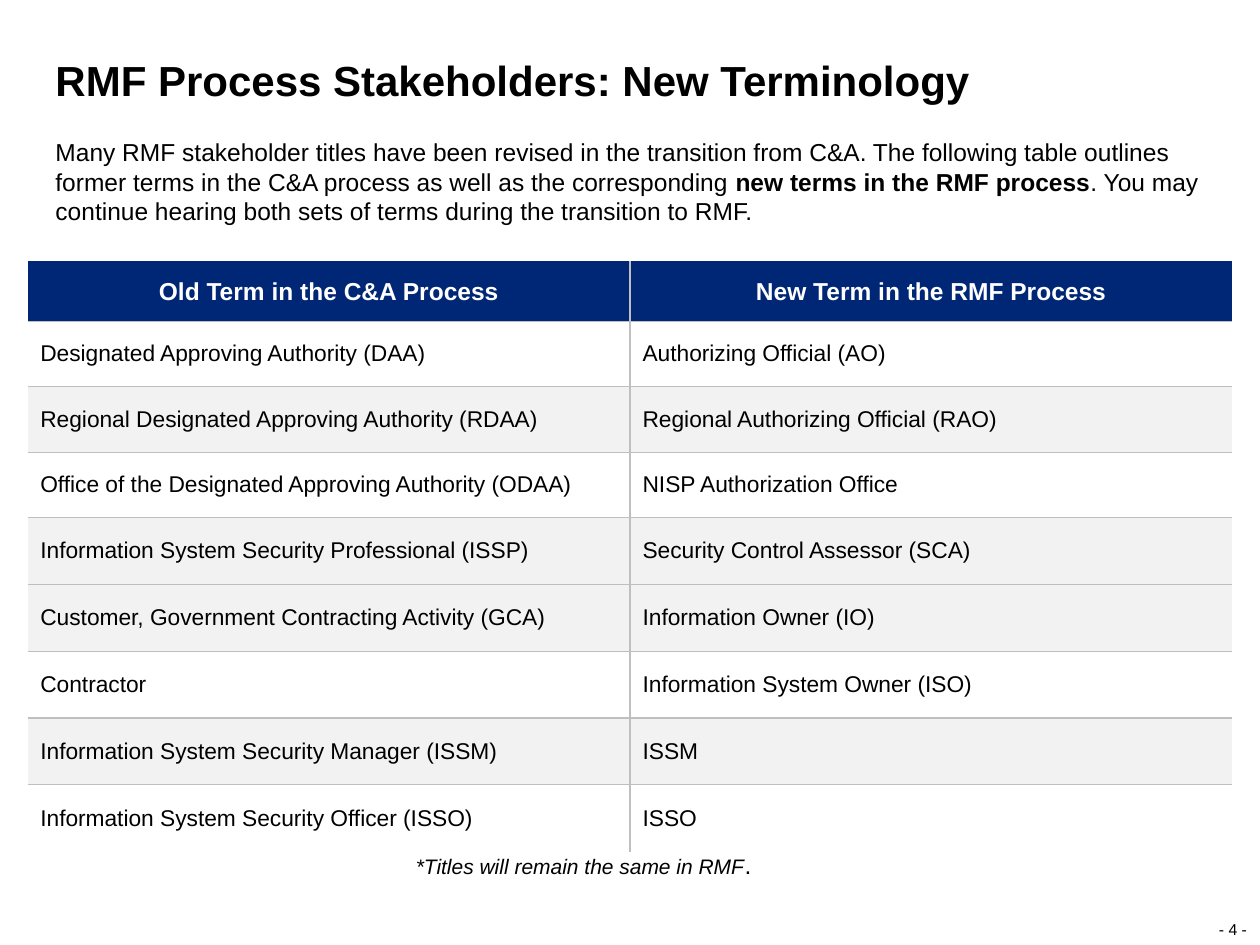
from lxml.etree import SubElement
from pptx import Presentation
from pptx.dml.color import RGBColor
from pptx.enum.text import MSO_ANCHOR, MSO_AUTO_SIZE, PP_ALIGN
from pptx.oxml.ns import qn
from pptx.util import Inches, Pt

COLORS = {"text": "000000", "white": "FFFFFF", "navy": "002776", "band": "F2F2F2", "rule": "BFBFBF"}
HEADERS = ("Old Term in the C&A Process", "New Term in the RMF Process")
TERMS = [
    ("Designated Approving Authority (DAA)", "Authorizing Official (AO)", "white"),
    ("Regional Designated Approving Authority (RDAA)", "Regional Authorizing Official (RAO)", "band"),
    ("Office of the Designated Approving Authority (ODAA)", "NISP Authorization Office", "white"),
    ("Information System Security Professional (ISSP)", "Security Control Assessor (SCA)", "band"),
    ("Customer, Government Contracting Activity (GCA)", "Information Owner (IO)", "band"),
    ("Contractor", "Information System Owner (ISO)", "white"),
    ("Information System Security Manager (ISSM)", "ISSM", "band"),
    ("Information System Security Officer (ISSO)", "ISSO", "white"),
]
ROW_HEIGHTS = [0.47] + [0.52] * 3 + [0.53] * 5


def add_run(paragraph, text, size=14, color="text", bold=False, italic=False):
    """Append formatted text to a paragraph."""
    run = paragraph.add_run()
    run.text = text
    font = run.font
    font.name, font.size, font.bold, font.italic = "Arial", Pt(size), bold, italic
    font.color.rgb = RGBColor.from_string(COLORS[color])


def prepare_frame(shape, anchor=MSO_ANCHOR.TOP, wrap=True):
    """Clear the margins of a shape and return its first paragraph."""
    frame = shape.text_frame
    frame.margin_left = frame.margin_right = frame.margin_top = frame.margin_bottom = 0
    frame.word_wrap = wrap
    frame.auto_size = MSO_AUTO_SIZE.NONE
    frame.vertical_anchor = anchor
    return frame.paragraphs[0]


def add_text_box(slide, left, top, width, height, **frame_format):
    """Add a text box without margins and return its first paragraph."""
    box = slide.shapes.add_textbox(Inches(left), Inches(top), Inches(width), Inches(height))
    return prepare_frame(box, **frame_format)


def set_title(slide, text):
    """Place and format the title placeholder."""
    title = slide.shapes.title
    title.left, title.top, title.width, title.height = map(Inches, (0.44, 0.48, 9.13, 0.36))
    paragraph = prepare_frame(title, anchor=MSO_ANCHOR.BOTTOM)
    paragraph.alignment = PP_ALIGN.LEFT
    paragraph.line_spacing = 0.9
    add_run(paragraph, text, size=24, bold=True)


def set_border(cell, side, color=None, width=0.75):
    """Draw one side of a cell, or hide it when no color is given."""
    properties = cell._tc.get_or_add_tcPr()
    line = SubElement(properties, qn(f"a:ln{side}"), w=str(Pt(width)))
    if color is None:
        SubElement(line, qn("a:noFill"))
    else:
        fill = SubElement(line, qn("a:solidFill"))
        SubElement(fill, qn("a:srgbClr"), val=COLORS[color])


def format_cell(cell, text, fill, borders, header=False):
    """Fill one table cell with text, color and borders."""
    cell.vertical_anchor = MSO_ANCHOR.MIDDLE
    paragraph = cell.text_frame.paragraphs[0]
    paragraph.alignment = PP_ALIGN.CENTER if header else PP_ALIGN.LEFT
    add_run(paragraph, text, size=14 if header else 13, color="white" if header else "text", bold=header)
    for side, color in borders.items():
        set_border(cell, side, color, width=1 if color == "navy" else 0.75)
    cell.fill.solid()
    cell.fill.fore_color.rgb = RGBColor.from_string(COLORS[fill])


def add_terms_table(slide):
    """Add the table of old and new terms."""
    rows = [(*HEADERS, "navy")] + TERMS
    frame = slide.shapes.add_table(
        len(rows), 2, Inches(0.22), Inches(2.08), Inches(9.56), Inches(sum(ROW_HEIGHTS)))
    table = frame.table
    table.first_row = table.horz_banding = False
    for row_index, (*texts, fill) in enumerate(rows):
        table.rows[row_index].height = Inches(ROW_HEIGHTS[row_index])
        header = row_index == 0
        for column_index, text in enumerate(texts):
            borders = {
                "L": "rule" if column_index == 1 else None,
                "R": "rule" if column_index == 0 else None,
                "T": "navy" if header else "rule",
                "B": "rule" if row_index < len(rows) - 1 else None,
            }
            format_cell(table.cell(row_index, column_index), text, fill, borders, header)


def main():
    """Build and save the slide."""
    presentation = Presentation()
    presentation.slide_width, presentation.slide_height = Inches(10), Inches(7.5)
    slide = presentation.slides.add_slide(presentation.slide_layouts[5])
    set_title(slide, "RMF Process Stakeholders: New Terminology")
    add_terms_table(slide)

    introduction = add_text_box(slide, 0.44, 1.09, 9.12, 0.51)
    add_run(introduction, "Many RMF stakeholder titles have been revised in the transition from C&A. "
            "The following table outlines former terms in the C&A process as well as the corresponding ")
    add_run(introduction, "new terms in the RMF process", bold=True)
    add_run(introduction, ". You may continue hearing both sets of terms during the transition to RMF.")

    footnote = add_text_box(slide, 3.3, 6.75, 3.94, 0.26)
    add_run(footnote, "*Titles will remain the same in RMF", size=12, italic=True)
    add_run(footnote, ".")

    page_number = add_text_box(slide, 9.63, 7.29, 0.31, 0.16, anchor=MSO_ANCHOR.BOTTOM, wrap=False)
    page_number.alignment = PP_ALIGN.CENTER
    page_number.line_spacing = 1.06
    add_run(page_number, "- 4 -", size=9)

    presentation.save("out.pptx")


if __name__ == "__main__":
    main()
